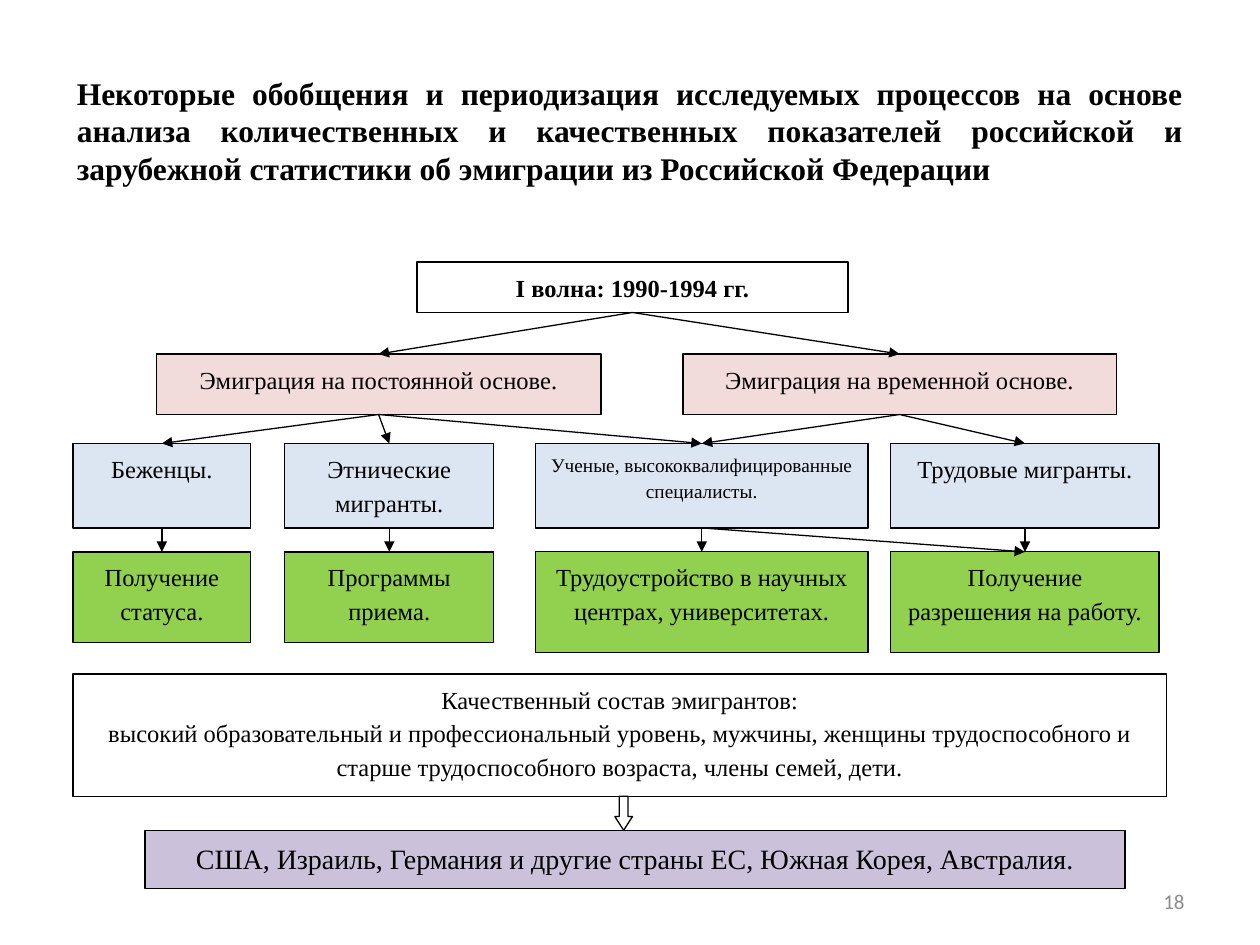
from dataclasses import dataclass
from lxml.etree import SubElement
from pptx import Presentation
from pptx.dml.color import RGBColor
from pptx.enum.shapes import MSO_CONNECTOR, MSO_SHAPE
from pptx.enum.text import MSO_ANCHOR, PP_ALIGN
from pptx.oxml.ns import qn
from pptx.util import Inches, Pt


@dataclass(frozen=True)
class Theme:
    black: str = "000000"
    white: str = "FFFFFF"
    pink: str = "F2DCDB"
    blue: str = "DCE6F2"
    green: str = "92D050"
    purple: str = "CCC1DA"
    gray: str = "8C8C8C"
    serif: str = "Times New Roman"
    sans: str = "Calibri"
    title: int = 18
    large: int = 16
    body: int = 14
    number: int = 12
    small: int = 11
    line: float = 0.75


theme = Theme()


def write(tf, text, size, font, color, align, bold=False):
    tf.text = text
    tf.word_wrap = True
    for p in tf.paragraphs:
        p.alignment = align
        for r in p.runs:
            r.font.size = Pt(size)
            r.font.name = font
            r.font.bold = bold
            r.font.color.rgb = RGBColor.from_string(color)


def add_block(kind, left, top, width, height, fill):
    sp = s.shapes.add_shape(kind, Inches(left), Inches(top), Inches(width), Inches(height))
    sp.shadow.inherit = False
    sp.fill.solid()
    sp.fill.fore_color.rgb = RGBColor.from_string(fill)
    sp.line.color.rgb = RGBColor.from_string(theme.black)
    sp.line.width = Pt(theme.line)
    return sp


prs = Presentation()
prs.slide_width, prs.slide_height = Inches(10), Inches(7.5)
s = prs.slides.add_slide(prs.slide_layouts[5])

title = s.shapes.title
title.left, title.top, title.width, title.height = Inches(0.51), Inches(0.21), Inches(8.98), Inches(1.65)
write(
    title.text_frame,
    "Некоторые обобщения и периодизация исследуемых процессов на основе анализа "
    "количественных и качественных показателей российской и зарубежной статистики "
    "об эмиграции из Российской Федерации",
    theme.title, theme.serif, theme.black, PP_ALIGN.JUSTIFY, True,
)
title.text_frame.vertical_anchor = MSO_ANCHOR.MIDDLE

columns = [(0.58, 1.41), (2.26, 1.66), (4.25, 2.64), (7.07, 2.13)]
groups = ["Беженцы.", "Этнические мигранты.", "Ученые, высококвалифицированные специалисты.", "Трудовые мигранты."]
outcomes = [
    "Получение статуса.", "Программы приема.",
    "Трудоустройство в научных центрах, университетах.", "Получение разрешения на работу.",
]
group_sizes = [theme.body, theme.body, theme.small, theme.body]
outcome_heights = [0.72, 0.72, 0.8, 0.8]

boxes = [
    ("wave", 3.31, 2.08, 3.42, 0.4, theme.white, theme.body, "I волна: 1990-1994 гг."),
    ("permanent", 1.24, 2.81, 3.53, 0.48, theme.pink, theme.body, "Эмиграция на постоянной основе."),
    ("temporary", 5.42, 2.81, 3.44, 0.48, theme.pink, theme.body, "Эмиграция на временной основе."),
]
for i, (left, width) in enumerate(columns):
    boxes.append((f"group{i}", left, 3.52, width, 0.67, theme.blue, group_sizes[i], groups[i]))
    boxes.append((f"outcome{i}", left, 4.38, width, outcome_heights[i], theme.green, theme.body, outcomes[i]))
boxes += [
    ("profile", 0.58, 5.35, 8.68, 0.97, theme.white, theme.body,
     "Качественный состав эмигрантов:\n"
     "высокий образовательный и профессиональный уровень, мужчины, женщины "
     "трудоспособного и старше трудоспособного возраста, члены семей, дети."),
    ("countries", 1.15, 6.59, 7.78, 0.46, theme.purple, theme.large,
     "США, Израиль, Германия и другие страны ЕС, Южная Корея, Австралия."),
]

nodes = {}
for name, left, top, width, height, fill, size, text in boxes:
    sp = add_block(MSO_SHAPE.RECTANGLE, left, top, width, height, fill)
    write(sp.text_frame, text, size, theme.serif, theme.black, PP_ALIGN.CENTER, name == "wave")
    sp.text_frame.vertical_anchor = MSO_ANCHOR.TOP
    for p in sp.text_frame.paragraphs:
        p.line_spacing = 1.15
    nodes[name] = sp

links = [
    ("wave", "permanent"), ("wave", "temporary"),
    ("permanent", "group0"), ("permanent", "group1"), ("permanent", "group2"),
    ("temporary", "group2"), ("temporary", "group3"),
    *[(f"group{i}", f"outcome{i}") for i in range(len(columns))],
    ("group2", "outcome3"),
]
for start, end in links:
    a, b = nodes[start], nodes[end]
    c = s.shapes.add_connector(
        MSO_CONNECTOR.STRAIGHT, a.left + a.width // 2, a.top + a.height, b.left + b.width // 2, b.top
    )
    c.begin_connect(a, 2)
    c.end_connect(b, 0)
    c.line.color.rgb = RGBColor.from_string(theme.black)
    c.line.width = Pt(theme.line)
    SubElement(c.line._get_or_add_ln(), qn("a:tailEnd"), type="triangle")
    SubElement(c._element.spPr, qn("a:effectLst"))

arrow = add_block(MSO_SHAPE.DOWN_ARROW, 4.88, 6.32, 0.14, 0.27, theme.white)
arrow.adjustments[0] = 0.5
arrow.adjustments[1] = 0.78

number = s.shapes.add_textbox(Inches(7.17), Inches(6.95), Inches(2.33), Inches(0.4))
write(number.text_frame, "18", theme.number, theme.sans, theme.gray, PP_ALIGN.RIGHT)
number.text_frame.vertical_anchor = MSO_ANCHOR.MIDDLE

prs.save("out.pptx")
